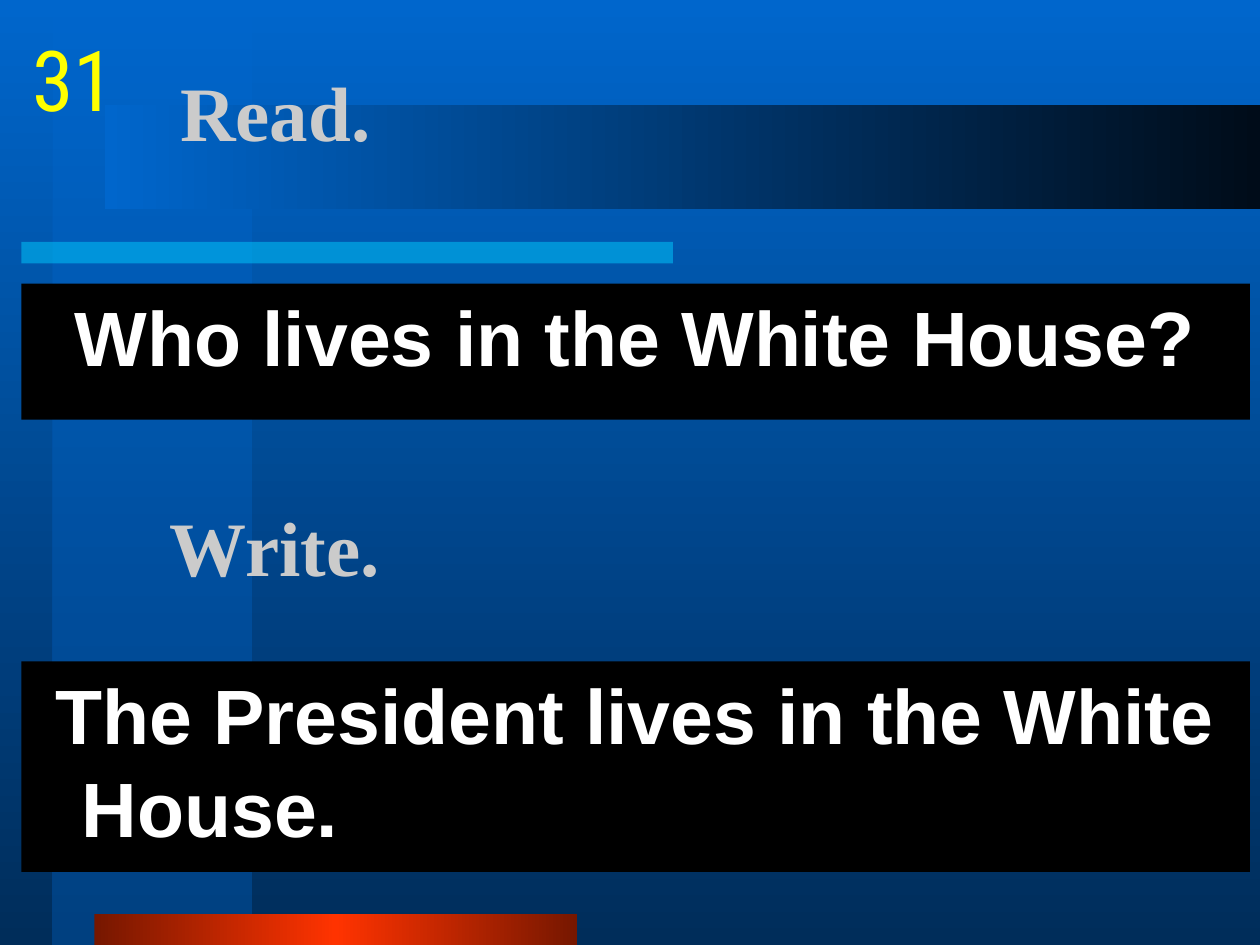
from lxml.etree import SubElement
from pptx import Presentation
from pptx.dml.color import RGBColor
from pptx.enum.shapes import MSO_SHAPE as Shape
from pptx.enum.text import MSO_ANCHOR as Anchor, MSO_AUTO_SIZE as AutoSize, PP_ALIGN as Align
from pptx.oxml.ns import qn
from pptx.util import Inches, Pt

HEADING = {"size": 44, "name": "Times New Roman", "bold": True, "color": "CBCBCB"}
SENTENCE = {"size": 44, "name": "Arial", "bold": True, "color": "FFFFFF"}
NUMBER = {"size": 48, "name": "Roboto Condensed", "bold": False, "color": "FFFF00"}


def color(value):
    return RGBColor.from_string(value)


def set_alpha(element, percent):
    for node in element.iter(qn("a:srgbClr")):
        SubElement(node, qn("a:alpha"), val=str(percent * 1000))


def fill_gradient(fill, element, stops, angle):
    fill.gradient()
    fill.gradient_angle = angle
    stop_list = next(element.iter(qn("a:gsLst")))
    stop_list.clear()
    for position, value in stops:
        stop = SubElement(stop_list, qn("a:gs"), pos=str(position * 1000))
        SubElement(stop, qn("a:srgbClr"), val=value)


def add_bar(page, place, stops, angle=0, alpha=None):
    bar = page.shapes.add_shape(Shape.RECTANGLE, *map(Inches, place))
    bar.shadow.inherit = False
    bar.line.fill.background()
    if len(stops) == 1:
        bar.fill.solid()
        bar.fill.fore_color.rgb = color(stops[0][1])
    else:
        fill_gradient(bar.fill, bar.element, stops, angle)
    if alpha is not None:
        set_alpha(bar.element.spPr, alpha)
    return bar


def write_text(box, text, style, align=Align.LEFT, anchor=Anchor.TOP, wrap=True):
    frame = box.text_frame
    settings = {"word_wrap": wrap, "auto_size": AutoSize.NONE, "vertical_anchor": anchor}
    for name, value in settings.items():
        setattr(frame, name, value)
    para = frame.paragraphs[0]
    para.alignment = align
    span = para.add_run()
    span.text = text
    for name, value in style.items():
        if name == "color":
            span.font.color.rgb = color(value)
        else:
            setattr(span.font, name, Pt(value) if name == "size" else value)
    return para


def add_sentence(page, place, text, align):
    panel = add_bar(page, place, [(0, "000000")])
    para = write_text(panel, text, SENTENCE, align)
    properties = para._p.get_or_add_pPr()
    properties.set("marL", str(Inches(0.38)))
    properties.set("indent", str(Inches(-0.38)))
    space = SubElement(properties, qn("a:spcBef"))
    SubElement(space, qn("a:spcPct"), val="20000")


def add_label(page, place, text, style, **layout):
    box = page.shapes.add_textbox(*map(Inches, place))
    write_text(box, text, style, **layout)


def add_title(page, place, text):
    title = page.shapes.title
    title.left, title.top, title.width, title.height = map(Inches, place)
    write_text(title, text, HEADING, anchor=Anchor.MIDDLE)
    page.shapes.element.append(title.element)


def add_backdrop(page):
    fill_gradient(page.background.fill, page.element, [(0, "0066CC"), (100, "002D5A")], 270)
    add_bar(page, (0.42, 0, 1.58, 7.5), [(0, "0066CC"), (100, "0053A6")], 270, alpha=50)
    add_bar(page, (0.17, 1.92, 5.17, 0.17), [(0, "00CCFF")], alpha=50)
    add_bar(page, (0.75, 7.25, 3.83, 0.25), [(0, "761700"), (50, "FF3300"), (100, "761700")])
    add_bar(page, (0.83, 0.83, 9.17, 0.83), [(0, "0066CC"), (100, "000C19")])


def main():
    deck = Presentation()
    deck.slide_width, deck.slide_height = Inches(10), Inches(7.5)
    page = deck.slides.add_slide(deck.slide_layouts.get_by_name("Title Only"))
    add_backdrop(page)
    add_title(page, (1.33, 0.25, 8.5, 1.25), "Read.")
    add_sentence(page, (0.17, 2.25, 9.75, 1.08), "Who lives in the White House?", Align.CENTER)
    add_label(page, (1.25, 3.5, 8.5, 1.67), "Write.", HEADING, anchor=Anchor.MIDDLE)
    add_sentence(page, (0.17, 5.25, 9.75, 1.67), " The President lives in the White House.", Align.LEFT)
    add_label(page, (0.17, 0.17, 0.83, 0.83), "31", NUMBER, align=Align.CENTER, wrap=False)
    deck.save("out.pptx")


if __name__ == "__main__":
    main()
